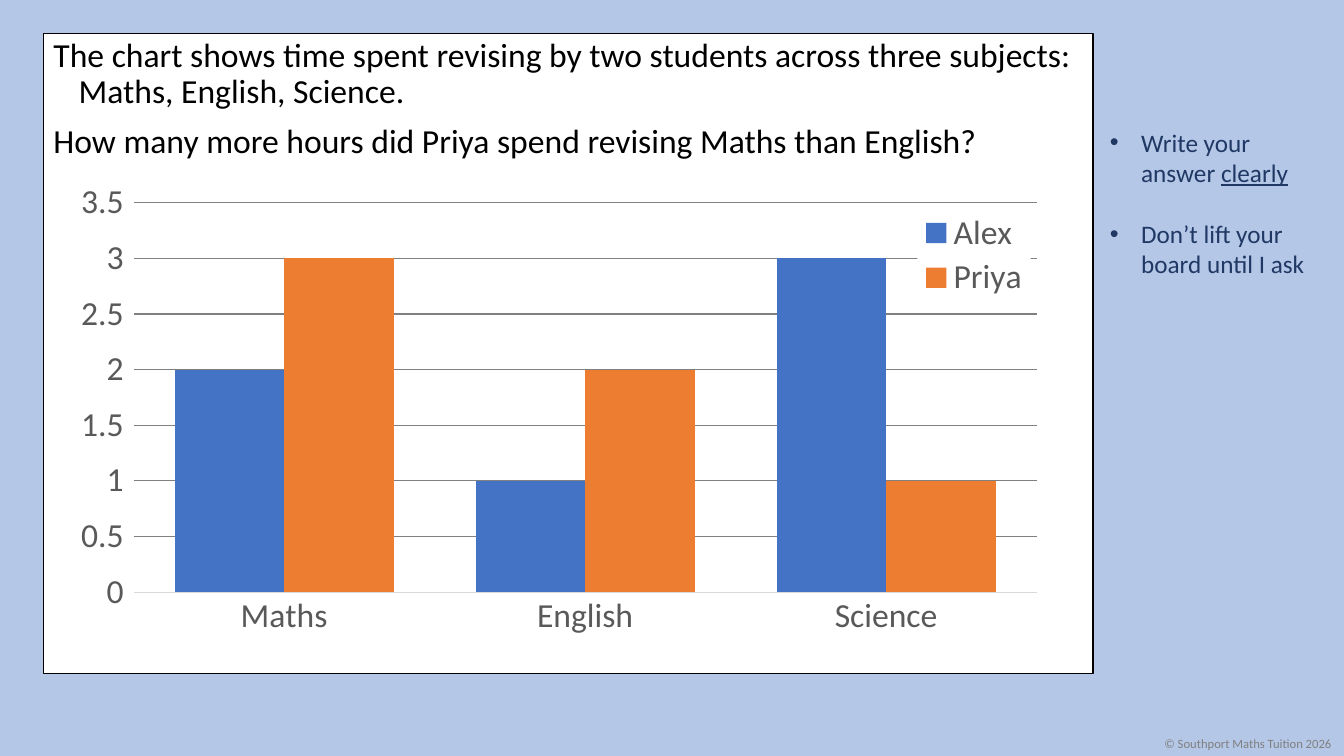
"""Build a revision question slide with a clustered column chart."""
import lxml.etree
import pptx
import pptx.chart.data
import pptx.dml.color
import pptx.enum.chart
import pptx.enum.shapes
import pptx.enum.text
import pptx.oxml
import pptx.oxml.ns
import pptx.util

Inches = pptx.util.Inches
Pt = pptx.util.Pt
qn = pptx.oxml.ns.qn
COLOURS = {
    "background": "B4C7E7", "panel": "FFFFFF", "text": "000000",
    "reminder": "203864", "copyright": "808080", "labels": "595959",
    "axis": "D9D9D9", "grid": "808080", "Alex": "4472C4", "Priya": "ED7D31",
}
FONT = "Calibri"


def style(font, size, colour):
    """Set the face, size and colour of a font."""
    font.name = FONT
    font.size = Pt(size)
    font.color.rgb = pptx.dml.color.RGBColor.from_string(COLOURS[colour])


def place(parent, index, target, fractions):
    """Give a chart part a manual layout in fractions of the chart."""
    for old in parent.findall(qn("c:layout")):
        parent.remove(old)
    layout = lxml.etree.Element(qn("c:layout"))
    manual = lxml.etree.SubElement(layout, qn("c:manualLayout"))
    settings = [("layoutTarget", target)] if target else []
    settings += [("xMode", "edge"), ("yMode", "edge")]
    settings += zip("xywh", fractions)
    for name, value in settings:
        lxml.etree.SubElement(manual, qn("c:" + name)).set("val", str(value))
    parent.insert(index, layout)


deck = pptx.Presentation()
deck.slide_width = Inches(13.33)
deck.slide_height = Inches(7.5)
page = deck.slides.add_slide(deck.slide_layouts[1])
rgb = {name: pptx.dml.color.RGBColor.from_string(value) for name, value in COLOURS.items()}
page.background.fill.solid()
page.background.fill.fore_color.rgb = rgb["background"]
title = page.shapes.title.element
title.getparent().remove(title)

frame = [Inches(length) for length in (0.43, 0.33, 10.41, 6.35)]
panel = page.shapes.add_shape(pptx.enum.shapes.MSO_SHAPE.RECTANGLE, *frame)
panel.shadow.inherit = False
panel.fill.solid()
panel.fill.fore_color.rgb = rgb["panel"]
panel.line.color.rgb = rgb["text"]
panel.line.width = Pt(1)

question = page.placeholders[1]
question.left, question.top, question.width, question.height = frame
panel.element.addnext(question.element)

reminders = page.shapes.add_textbox(Inches(10.91), Inches(1.21), Inches(2.32), Inches(1.62))
lists = [
    (question, 0.25, None, 24, "text", 10, 0.9, [
        [("The chart shows time spent revising by two students across three subjects: "
          "Maths, English, Science.", False)],
        [("How many more hours did Priya spend revising Maths than English?", False)],
    ]),
    (reminders, 0.31, "•", 18, "reminder", 22, 1.0, [
        [("Write your answer ", False), ("clearly", True)],
        [("Don’t lift your board until I ask", False)],
    ]),
]
for box, indent, bullet, size, colour, gap, spacing, paragraphs in lists:
    text = box.text_frame
    text.word_wrap = True
    text.auto_size = pptx.enum.text.MSO_AUTO_SIZE.NONE
    text.vertical_anchor = pptx.enum.text.MSO_ANCHOR.TOP
    for number, runs in enumerate(paragraphs):
        para = text.add_paragraph() if number else text.paragraphs[0]
        properties = para._p.get_or_add_pPr()
        properties.set("marL", str(Inches(indent)))
        properties.set("indent", str(-Inches(indent)))
        if bullet:
            lxml.etree.SubElement(properties, qn("a:buFont")).set("typeface", "Arial")
            lxml.etree.SubElement(properties, qn("a:buChar")).set("char", bullet)
        else:
            lxml.etree.SubElement(properties, qn("a:buNone"))
        para.line_spacing = spacing
        para.space_before = Pt(gap if number else 0)
        for words, underlined in runs:
            span = para.add_run()
            span.text = words
            style(span.font, size, colour)
            if underlined:
                span.font.underline = True

notice = page.shapes.add_textbox(Inches(11.45), Inches(7.25), Inches(1.88), Inches(0.25))
notice.text_frame.word_wrap = False
span = notice.text_frame.paragraphs[0].add_run()
span.text = "© Southport Maths Tuition 2026"
style(span.font, 9, "copyright")

hours = pptx.chart.data.CategoryChartData()
hours.categories = ["Maths", "English", "Science"]
hours.add_series("Alex", (2, 1, 3))
hours.add_series("Priya", (3, 2, 1))
chart = page.shapes.add_chart(
    pptx.enum.chart.XL_CHART_TYPE.COLUMN_CLUSTERED,
    Inches(0.58), Inches(1.77), Inches(9.94), Inches(4.73), hours).chart
style(chart.font, 10, "text")
chart.has_title = False
plot = chart.plots[0]
plot.gap_width = 75
plot.overlap = 0
plot.vary_by_categories = False
for series in plot.series:
    series.format.fill.solid()
    series.format.fill.fore_color.rgb = rgb[series.name]

subjects = chart.category_axis
subjects.major_tick_mark = pptx.enum.chart.XL_TICK_MARK.NONE
subjects.format.line.color.rgb = rgb["axis"]
subjects.format.line.width = Pt(0.75)
scale = chart.value_axis
scale.minimum_scale = 0
scale.maximum_scale = 3.5
scale.major_unit = 0.5
scale.major_tick_mark = pptx.enum.chart.XL_TICK_MARK.OUTSIDE
scale.format.line.fill.background()
scale.has_major_gridlines = True
scale.major_gridlines.format.line.color.rgb = rgb["grid"]
scale.major_gridlines.format.line.width = Pt(0.75)

chart.has_legend = True
legend = chart.legend
legend.position = pptx.enum.chart.XL_LEGEND_POSITION.RIGHT
legend.include_in_layout = True
for font in (subjects.tick_labels.font, scale.tick_labels.font, legend.font):
    style(font, 24, "labels")

chart_xml = chart.element.find(qn("c:chart"))
legend_xml = chart_xml.find(qn("c:legend"))
place(chart_xml.find(qn("c:plotArea")), 0, "inner", (0.075, 0.051, 0.901, 0.817))
place(legend_xml, 1, None, (0.857, 0.064, 0.113, 0.195))
backing = lxml.etree.Element(qn("c:spPr"))
fill = lxml.etree.SubElement(backing, qn("a:solidFill"))
lxml.etree.SubElement(fill, qn("a:srgbClr")).set("val", COLOURS["panel"])
legend_xml.find(qn("c:overlay")).addnext(backing)

deck.save("out.pptx")
